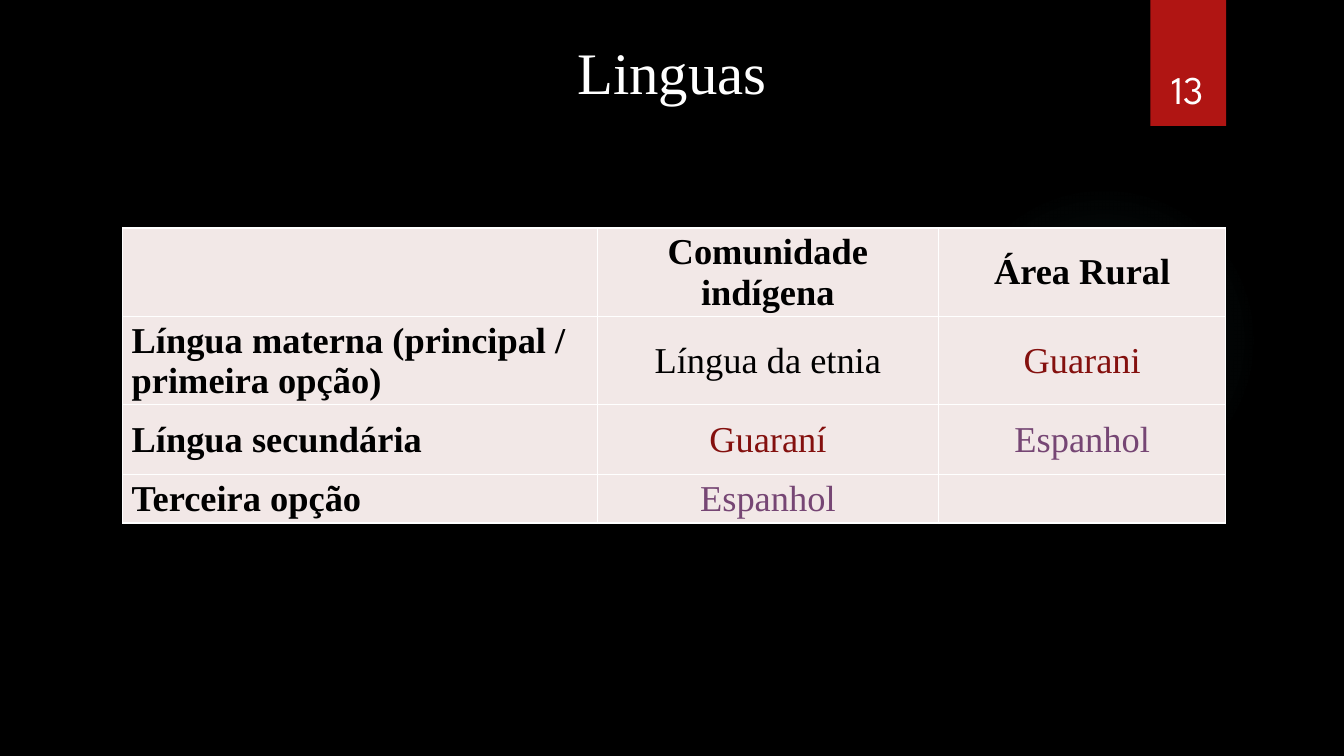
from dataclasses import dataclass

from pptx import Presentation
from pptx.dml.color import RGBColor
from pptx.enum.shapes import MSO_SHAPE as Shape
from pptx.enum.text import MSO_ANCHOR as Anchor, MSO_AUTO_SIZE as AutoSize, PP_ALIGN as Align
from pptx.oxml import parse_xml
from pptx.oxml.ns import nsdecls, qn
from pptx.util import Pt


@dataclass(frozen=True)
class Theme:
    background: str = "000000"
    light: str = "FFFFFF"
    dark: str = "000000"
    accent: str = "B01513"
    glow: str = "50B9C1"
    cell: str = "F2E8E7"
    guarani: str = "84100E"
    spanish: str = "764674"
    body_font: str = "Times New Roman"
    number_font: str = "League Spartan"
    title_size: int = 42
    number_size: int = 28
    table_size: int = 26


class SlideBuilder:
    def __init__(self, presentation, theme):
        self.theme = theme
        self.slide = presentation.slides.add_slide(presentation.slide_layouts[5])
        fill = self.slide.background.fill
        fill.solid()
        fill.fore_color.rgb = RGBColor.from_string(theme.background)

    def format_text(self, text_frame, font_name, size, color, bold=False, align=Align.CENTER):
        for paragraph in text_frame.paragraphs:
            paragraph.alignment = align
            for run in paragraph.runs:
                run.font.name = font_name
                run.font.size = Pt(size)
                run.font.bold = bold
                run.font.color.rgb = RGBColor.from_string(color)

    def title(self, text, left, top, width, height):
        shape = self.slide.shapes.title
        shape.left, shape.top, shape.width, shape.height = map(Pt, (left, top, width, height))
        text_frame = shape.text_frame
        text_frame.text = text
        text_frame.word_wrap = True
        text_frame.auto_size = AutoSize.NONE
        text_frame.vertical_anchor = Anchor.TOP
        self.format_text(text_frame, self.theme.body_font, self.theme.title_size, self.theme.light)

    def shape(self, kind, color, left, top, width, height):
        shape = self.slide.shapes.add_shape(kind, *map(Pt, (left, top, width, height)))
        shape.shadow.inherit = False
        shape.fill.solid()
        shape.fill.fore_color.rgb = RGBColor.from_string(color)
        shape.line.fill.background()
        return shape

    def glow(self, left, top, diameter):
        shape = self.shape(Shape.OVAL, self.theme.glow, left, top, diameter, diameter)
        stops = "".join(
            f'<a:gs pos="{position * 1000}"><a:srgbClr val="{self.theme.glow}">'
            f'<a:alpha val="{alpha * 1000}"/></a:srgbClr></a:gs>'
            for position, alpha in ((0, 7), (36, 6), (69, 0))
        )
        gradient = parse_xml(
            f'<a:gradFill {nsdecls("a")}><a:gsLst>{stops}</a:gsLst><a:path path="circle">'
            '<a:fillToRect l="50000" t="50000" r="50000" b="50000"/></a:path></a:gradFill>'
        )
        properties = shape._element.spPr
        properties.replace(properties.find(qn("a:solidFill")), gradient)

    def slide_number(self, text, left, top, width, height):
        box = self.slide.shapes.add_textbox(*map(Pt, (left, top, width, height)))
        text_frame = box.text_frame
        text_frame.text = text
        text_frame.word_wrap = True
        text_frame.vertical_anchor = Anchor.BOTTOM
        self.format_text(text_frame, self.theme.number_font, self.theme.number_size, self.theme.light)

    def table(self, rows, left, top, widths, heights):
        frame = self.slide.shapes.add_table(
            len(heights), len(widths), *map(Pt, (left, top, sum(widths), sum(heights)))
        )
        table = frame.table
        table.first_row = table.horz_banding = False
        for column, width in zip(table.columns, widths):
            column.width = Pt(width)
        for row, height in zip(table.rows, heights):
            row.height = Pt(height)
        for row_index, row in enumerate(rows):
            for column_index, (text, color) in enumerate(row):
                self.cell(table.cell(row_index, column_index), text, color,
                          is_label=column_index == 0, bold=row_index == 0 or column_index == 0)

    def cell(self, cell, text, color, is_label, bold):
        cell.fill.solid()
        cell.fill.fore_color.rgb = RGBColor.from_string(self.theme.cell)
        cell.margin_left = Pt(6.5 if is_label else 0.7)
        cell.margin_top = cell.margin_right = Pt(0.7)
        cell.margin_bottom = Pt(0)
        cell.vertical_anchor = Anchor.MIDDLE
        for index, side in enumerate(("lnL", "lnR", "lnT", "lnB")):
            cell._tc.tcPr.insert(index, parse_xml(
                f'<a:{side} {nsdecls("a")} w="{Pt(1)}"><a:solidFill>'
                f'<a:srgbClr val="{self.theme.light}"/></a:solidFill></a:{side}>'
            ))
        if text:
            cell.text_frame.text = text
            self.format_text(cell.text_frame, self.theme.body_font, self.theme.table_size,
                             color, bold, Align.LEFT if is_label else Align.CENTER)


def main():
    theme = Theme()
    presentation = Presentation()
    presentation.slide_width, presentation.slide_height = Pt(960), Pt(540)
    builder = SlideBuilder(presentation, theme)
    builder.glow(677.5, 131.8, 221.8)
    builder.shape(Shape.RECTANGLE, theme.accent, 821.8, 0, 54, 90)
    builder.slide_number("13", 815, 23, 66.2, 60.5)
    builder.title("Linguas", 156, 21.6, 648, 90)
    rows = (
        (("", theme.dark), ("Comunidade indígena", theme.dark), ("Área Rural", theme.dark)),
        (("Língua materna (principal / primeira opção)", theme.dark),
         ("Língua da etnia", theme.dark), ("Guarani", theme.guarani)),
        (("Língua secundária", theme.dark), ("Guaraní", theme.guarani), ("Espanhol", theme.spanish)),
        (("Terceira opção", theme.dark), ("Espanhol", theme.spanish), ("", theme.dark)),
    )
    builder.table(rows, 87.6, 162.9, (339, 244, 205), (58, 58, 50, 34.5))
    presentation.save("out.pptx")


if __name__ == "__main__":
    main()
